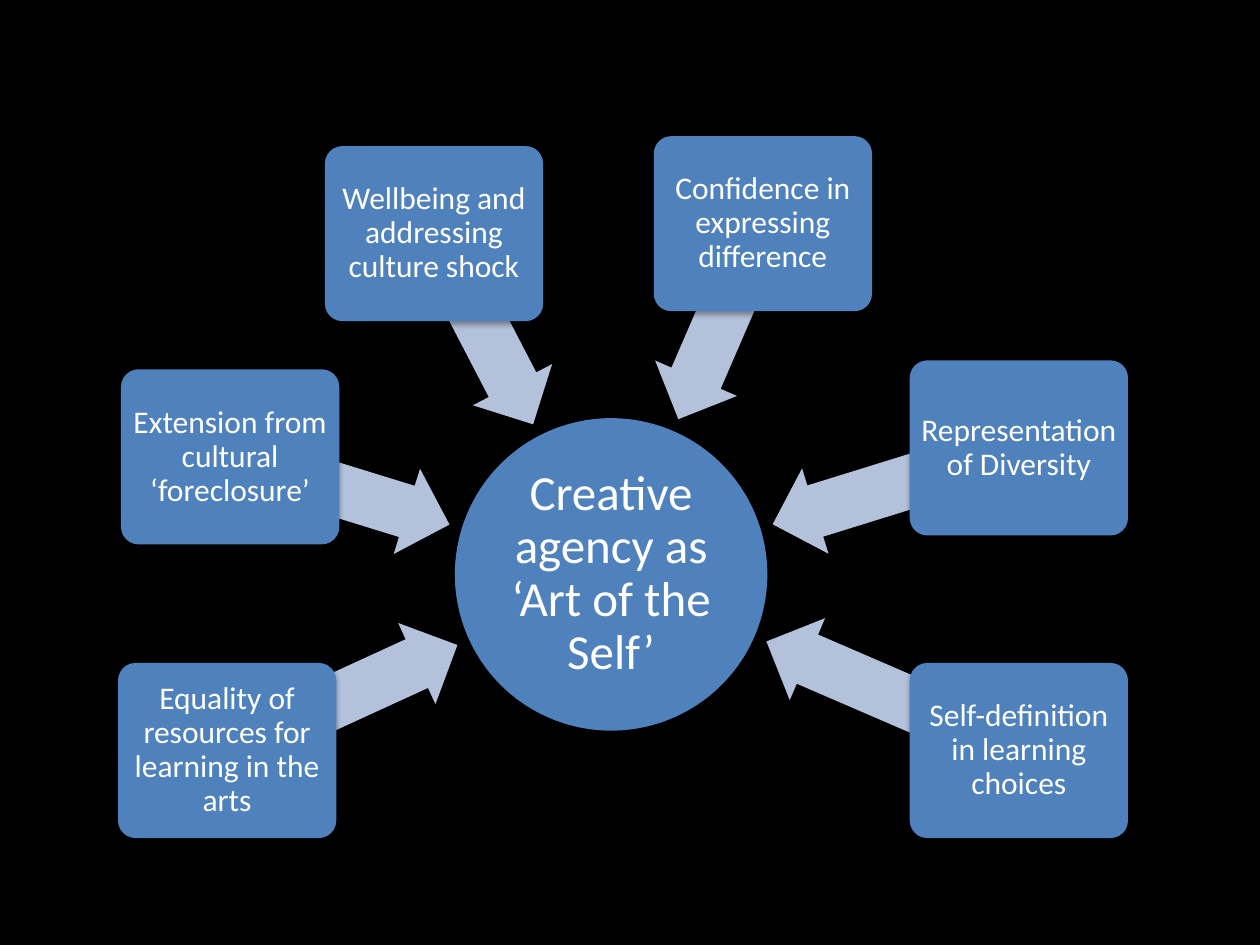
import math

import lxml.etree
import pptx
import pptx.dml.color
import pptx.enum.shapes
import pptx.enum.text
import pptx.oxml.ns
import pptx.util

Cm = pptx.util.Cm
SHAPES = pptx.enum.shapes.MSO_SHAPE

COLOURS = {"background": "000000", "node": "4F81BD", "arrow": "B3C1DB",
           "text": "FFFFFF", "shadow": "000000"}

# Lengths are in centimetres
HUB_CENTRE = (12.32, 11.58)
HUB_SIZE = 6.3
CARD_SIZE = (4.4, 3.53)
ARROW_HEIGHT = 1.8
TIP_TO_HUB_CENTRE = 3.41

# Text and centre of each card, clockwise from the lower left
OUTCOMES = [
    ("Equality of resources for learning in the arts", (4.58, 15.13)),
    ("Extension from cultural ‘foreclosure’", (4.64, 9.21)),
    ("Wellbeing and addressing culture shock", (8.75, 4.71)),
    ("Confidence in expressing difference", (15.38, 4.51)),
    ("Representation of Diversity", (20.54, 9.03)),
    ("Self-definition in learning choices", (20.54, 15.13)),
]


def rgb(name):
    return pptx.dml.color.RGBColor.from_string(COLOURS[name])


def add_centred(slide, kind, centre, size, colour):
    """Add a borderless preset shape around its centre."""
    (x, y), (width, height) = centre, size
    shape = slide.shapes.add_shape(kind, Cm(x - width / 2), Cm(y - height / 2),
                                   Cm(width), Cm(height))
    shape.shadow.inherit = False
    shape.fill.solid()
    shape.fill.fore_color.rgb = rgb(colour)
    shape.line.fill.background()
    return shape


def add_drop_shadow(shape, opacity, distance):
    qn = pptx.oxml.ns.qn
    effects = shape._element.spPr.find(qn("a:effectLst"))
    shadow = lxml.etree.SubElement(
        effects, qn("a:outerShdw"), blurRad=str(pptx.util.Pt(3.1)),
        dist=str(pptx.util.Pt(distance)), dir="5400000", rotWithShape="0")
    colour = lxml.etree.SubElement(shadow, qn("a:srgbClr"), val=COLOURS["shadow"])
    lxml.etree.SubElement(colour, qn("a:alpha"), val=str(opacity * 1000))


def write_label(shape, text, size, inset):
    frame = shape.text_frame
    frame.word_wrap = True
    frame.vertical_anchor = pptx.enum.text.MSO_ANCHOR.MIDDLE
    frame.margin_left = frame.margin_right = Cm(inset)
    frame.margin_top = frame.margin_bottom = Cm(inset)
    paragraph = frame.paragraphs[0]
    paragraph.alignment = pptx.enum.text.PP_ALIGN.CENTER
    paragraph.line_spacing = 0.9
    run = paragraph.add_run()
    run.text = text
    run.font.name = "Calibri"
    run.font.size = pptx.util.Pt(size)
    run.font.color.rgb = rgb("text")


def add_hub(slide, text):
    hub = add_centred(slide, SHAPES.OVAL, HUB_CENTRE, (HUB_SIZE, HUB_SIZE), "node")
    add_drop_shadow(hub, 38, 1.6)
    write_label(hub, text, 28, 0.05)


def add_arrow_to_hub(slide, start):
    """Point a block arrow from a card's centre towards the hub."""
    dx, dy = HUB_CENTRE[0] - start[0], HUB_CENTRE[1] - start[1]
    distance = math.hypot(dx, dy)
    length = distance - TIP_TO_HUB_CENTRE
    share = length / 2 / distance
    middle = (start[0] + dx * share, start[1] + dy * share)
    arrow = add_centred(slide, SHAPES.LEFT_ARROW, middle, (length, ARROW_HEIGHT), "arrow")
    arrow.adjustments[0] = 0.6
    arrow.adjustments[1] = 0.5
    arrow.rotation = (math.degrees(math.atan2(dy, dx)) + 180) % 360


def add_card(slide, text, centre):
    card = add_centred(slide, SHAPES.ROUNDED_RECTANGLE, centre, CARD_SIZE, "node")
    card.adjustments[0] = 0.1
    add_drop_shadow(card, 35, 1.8)
    write_label(card, text, 18, 0.1)


def main():
    deck = pptx.Presentation()
    deck.slide_width, deck.slide_height = Cm(25.4), Cm(19.05)
    slide = deck.slides.add_slide(deck.slide_layouts[6])
    slide.background.fill.solid()
    slide.background.fill.fore_color.rgb = rgb("background")

    add_hub(slide, "Creative agency as ‘Art of the Self’")
    for text, centre in OUTCOMES:
        add_arrow_to_hub(slide, centre)
        add_card(slide, text, centre)
    deck.save("out.pptx")


if __name__ == "__main__":
    main()
